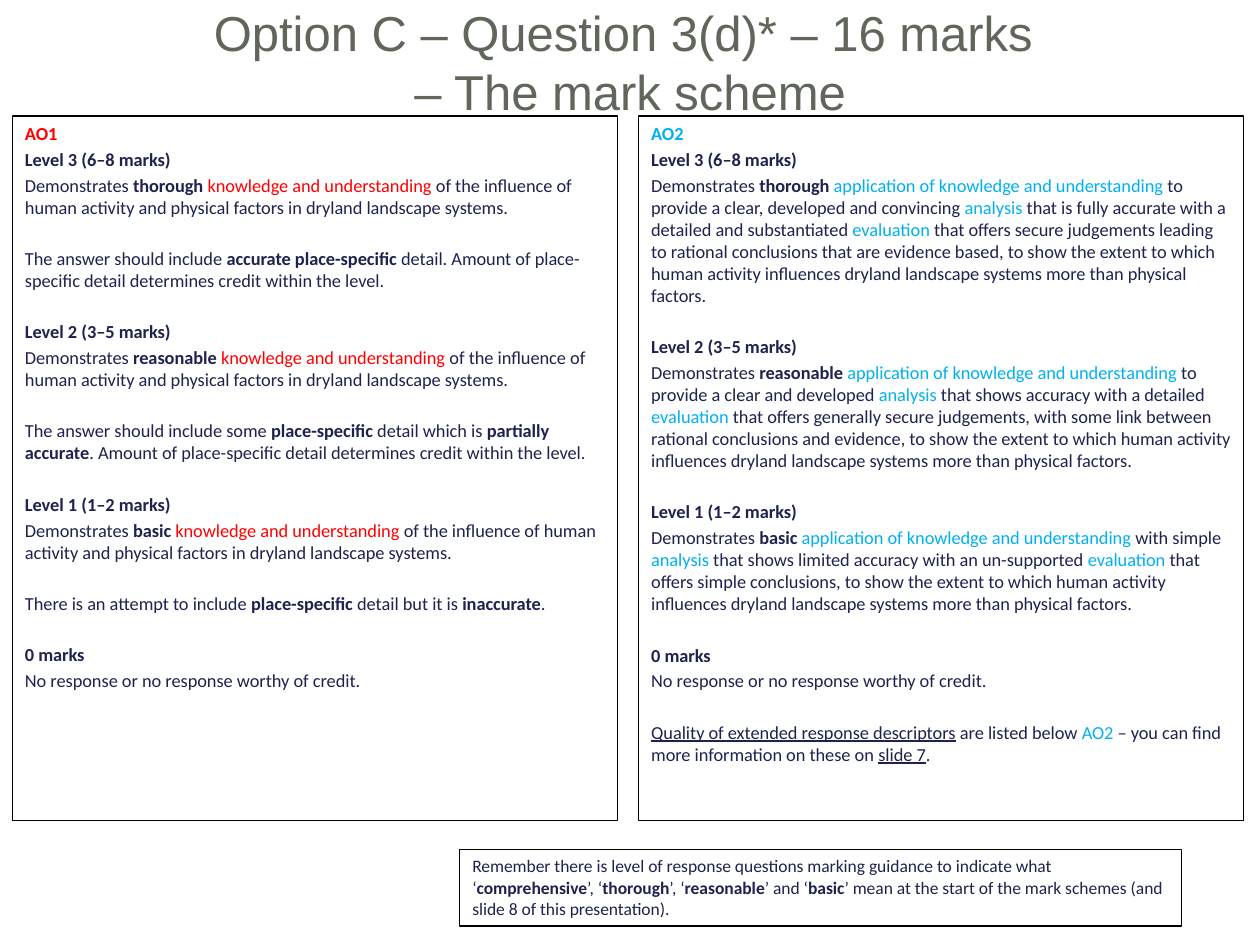
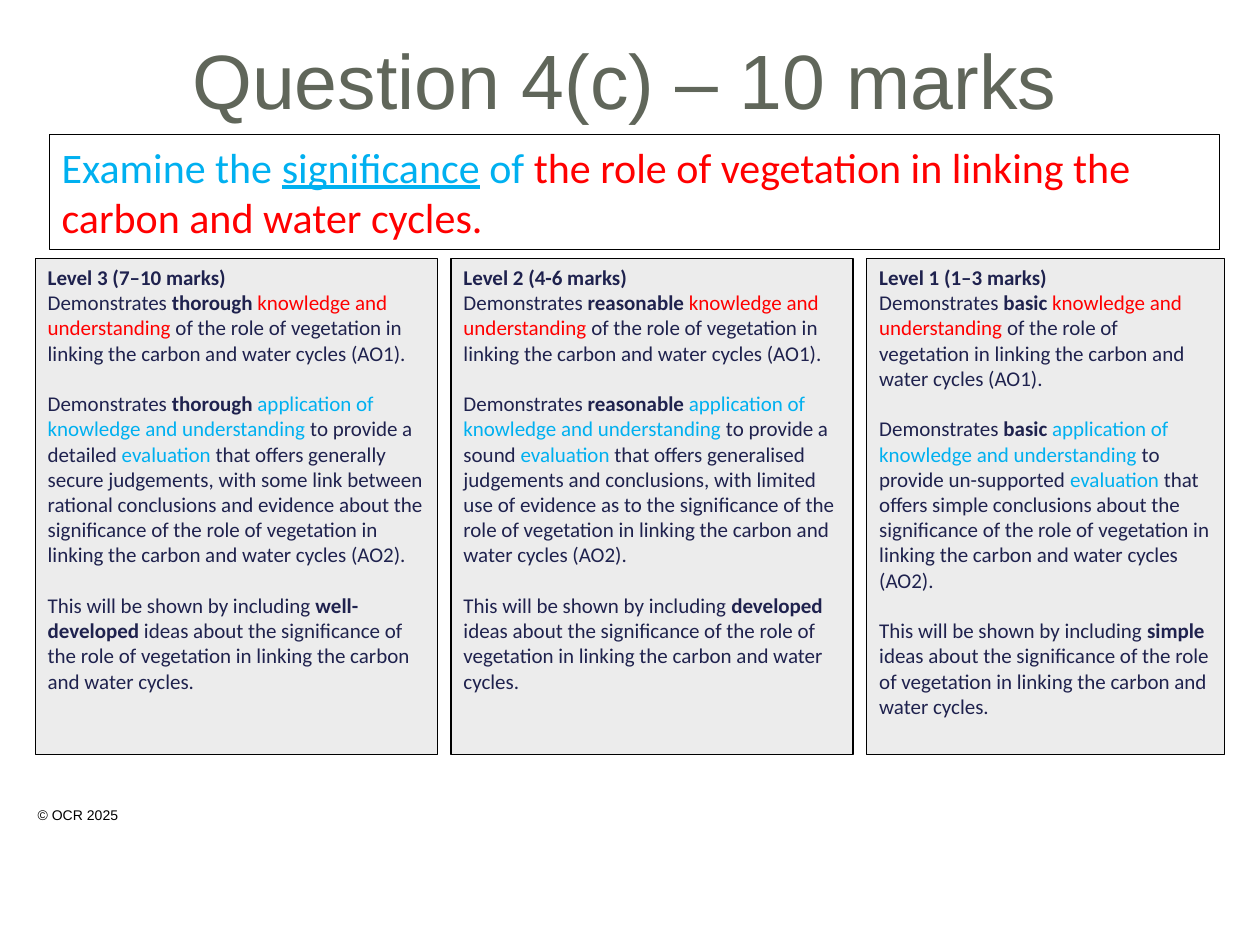
"""Build two slides that set out mark schemes with colour-coded objectives."""
from pptx import Presentation
from pptx import util as u
from pptx.dml.color import RGBColor
from pptx.enum import shapes, text

HUES = {"ink": "1F224E", "red": "FF0000", "sky": "00B0F0", "head": "60665A",
        "black": "000000", "white": "FFFFFF", "grey": "ECECEC"}
TINTS = {"~": "red", "^": "sky"}
MARKS = "*_~^"


def split(line):
    """Yield (words, active marks) for a line with toggled marks."""
    words, live = "", set()
    for char in line:
        if char in MARKS:
            if words:
                yield words, frozenset(live)
            words = ""
            live ^= {char}
        else:
            words += char
    if words:
        yield words, frozenset(live)


class Deck:
    """Hold the style and the current slide."""

    scale = 9144

    def __init__(self):
        self.show = Presentation()
        self.show.slide_width = self.px(1000)
        self.show.slide_height = self.px(750)
        self.slide = None

    def px(self, count):
        return u.Emu(count * self.scale)

    def hue(self, name):
        return RGBColor.from_string(HUES[name])

    def font(self, para, size, face="Calibri", hue="ink"):
        para.font.name = face
        para.font.size = u.Pt(size)
        para.font.color.rgb = self.hue(hue)

    def page(self, title, area, size):
        self.slide = self.show.slides.add_slide(self.show.slide_layouts[5])
        head = self.slide.shapes.title
        head.left, head.top, head.width, head.height = map(self.px, area)
        frame = head.text_frame
        frame.text = title
        frame.auto_size = text.MSO_AUTO_SIZE.NONE
        frame.vertical_anchor = text.MSO_ANCHOR.MIDDLE
        para = frame.paragraphs[0]
        para.alignment = text.PP_ALIGN.CENTER
        self.font(para, size, "Arial", "head")

    def line(self, para, line, size):
        para.alignment = text.PP_ALIGN.LEFT
        self.font(para, size)
        parts = list(split(line))
        for words, live in parts:
            run = para.add_run()
            run.text = words
            font = para.font if len(parts) == 1 else run.font
            if "*" in live:
                font.bold = True
            if "_" in live:
                font.underline = True
            for mark in live & TINTS.keys():
                font.color.rgb = self.hue(TINTS[mark])

    def box(self, area, blocks, size, fill="white", near=0, far=0):
        box = self.slide.shapes.add_shape(
            shapes.MSO_SHAPE.RECTANGLE, *map(self.px, area))
        box.shadow.inherit = False
        box.fill.solid()
        box.fill.fore_color.rgb = self.hue(fill)
        box.line.color.rgb = self.hue("black")
        box.line.width = u.Pt(0.75)
        frame = box.text_frame
        frame.word_wrap = True
        frame.vertical_anchor = text.MSO_ANCHOR.TOP
        para = frame.paragraphs[0]
        for index, block in enumerate(blocks):
            for row, line in enumerate(block):
                if index or row:
                    para = frame.add_paragraph()
                    para.space_before = u.Pt(near if row else far)
                self.line(para, line, size)

    def note(self, area, words):
        frame = self.slide.shapes.add_textbox(*map(self.px, area)).text_frame
        frame.word_wrap = True
        frame.text = words
        self.font(frame.paragraphs[0], 8, "Arial", "black")

    def save(self):
        self.show.save("out.pptx")


def scheme(deck):
    """Add the two-panel mark scheme."""
    deck.page("Option C – Question 3(d)* – 16 marks \v– The mark scheme",
              (0, 19, 1000, 59), 28)
    heads = ["*Level 3 (6–8 marks)*", "*Level 2 (3–5 marks)*",
             "*Level 1 (1–2 marks)*"]
    ranks = ["thorough", "reasonable", "basic"]
    zero = ["*0 marks*", "No response or no response worthy of credit."]
    credit = "Amount of place-specific detail determines credit within the level."
    places = [
        f"The answer should include *accurate place-specific* detail. {credit}",
        "The answer should include some *place-specific* detail which is "
        f"*partially accurate*. {credit}",
        "There is an attempt to include *place-specific* detail but it is "
        "*inaccurate*."]
    aims = [
        "to provide a clear, developed and convincing ^analysis^ that is fully "
        "accurate with a detailed and substantiated ^evaluation^ that offers "
        "secure judgements leading to rational conclusions that are evidence based",
        "to provide a clear and developed ^analysis^ that shows accuracy with a "
        "detailed ^evaluation^ that offers generally secure judgements, with some "
        "link between rational conclusions and evidence",
        "with simple ^analysis^ that shows limited accuracy with an un-supported "
        "^evaluation^ that offers simple conclusions"]
    know, apply = [], []
    for head, rank, place, aim in zip(heads, ranks, places, aims):
        know += [[head, f"Demonstrates *{rank} *~knowledge and understanding ~"
                  "of the influence of human activity and physical factors in "
                  "dryland landscape systems."], [place]]
        apply.append([head, f"Demonstrates *{rank} *^application of knowledge and "
                      f"understanding^ {aim}, to show the extent to which human "
                      "activity influences dryland landscape systems more than "
                      "physical factors."])
    know[0].insert(0, "*~AO1~*")
    apply[0].insert(0, "*^AO2^*")
    know.append(zero)
    apply += [zero, ["_Quality of extended response descriptors_ are listed below "
                     "^AO2^ – you can find more information on these on _slide 7_."]]
    for index, blocks in enumerate([know, apply]):
        deck.box((10 + 497 * index, 92, 480, 559), blocks, 10.5,
                 near=2.2, far=16.7)
    deck.box((365, 674, 573, 61), [[
        "Remember there is level of response questions marking guidance to indicate "
        "what ‘*comprehensive*’, ‘*thorough*’, ‘*reasonable*’ and ‘*basic*’ mean at "
        "the start of the mark schemes (and slide 8 of this presentation)."]], 10)


def levels(deck):
    """Add the question with its three level columns."""
    deck.page("Question 4(c) – 10 marks", (46, 0, 900, 125), 44)
    deck.box((39, 107, 929, 91), [[
        "^Examine the _significance_ of ^~the role of vegetation in linking the "
        "carbon and water cycles.~"]], 24)
    role = "the role of vegetation in linking the carbon and water cycles"
    grades = [
        (319, "Level 3 (7–10 marks)", "thorough", "a detailed",
         "generally secure judgements, with some link between rational "
         "conclusions and evidence about", "well-developed"),
        (319, "Level 2 (4-6 marks)", "reasonable", "a sound",
         "generalised judgements and conclusions, with limited use of evidence "
         "as to", "developed"),
        (284, "Level 1 (1–3 marks)", "basic", "un-supported",
         "simple conclusions about", "simple")]
    left = 28
    for width, head, rank, kind, offer, ideas in grades:
        deck.box((left, 205, width, 394), [
            [f"*{head}*", f"Demonstrates *{rank} *~knowledge and understanding~ "
             f"of {role} (AO1)."],
            [f"Demonstrates *{rank} *^application of knowledge and understanding^ "
             f"to provide {kind} ^evaluation^ that offers {offer} the "
             f"significance of {role} (AO2)."],
            [f"This will be shown by including *{ideas}* ideas about the "
             f"significance of {role}."]], 12, "grey", far=14.5)
        left += width + 11
    deck.note((20, 635, 189, 24), "© OCR 2025")


def main():
    deck = Deck()
    scheme(deck)
    levels(deck)
    deck.save()


if __name__ == "__main__":
    main()
